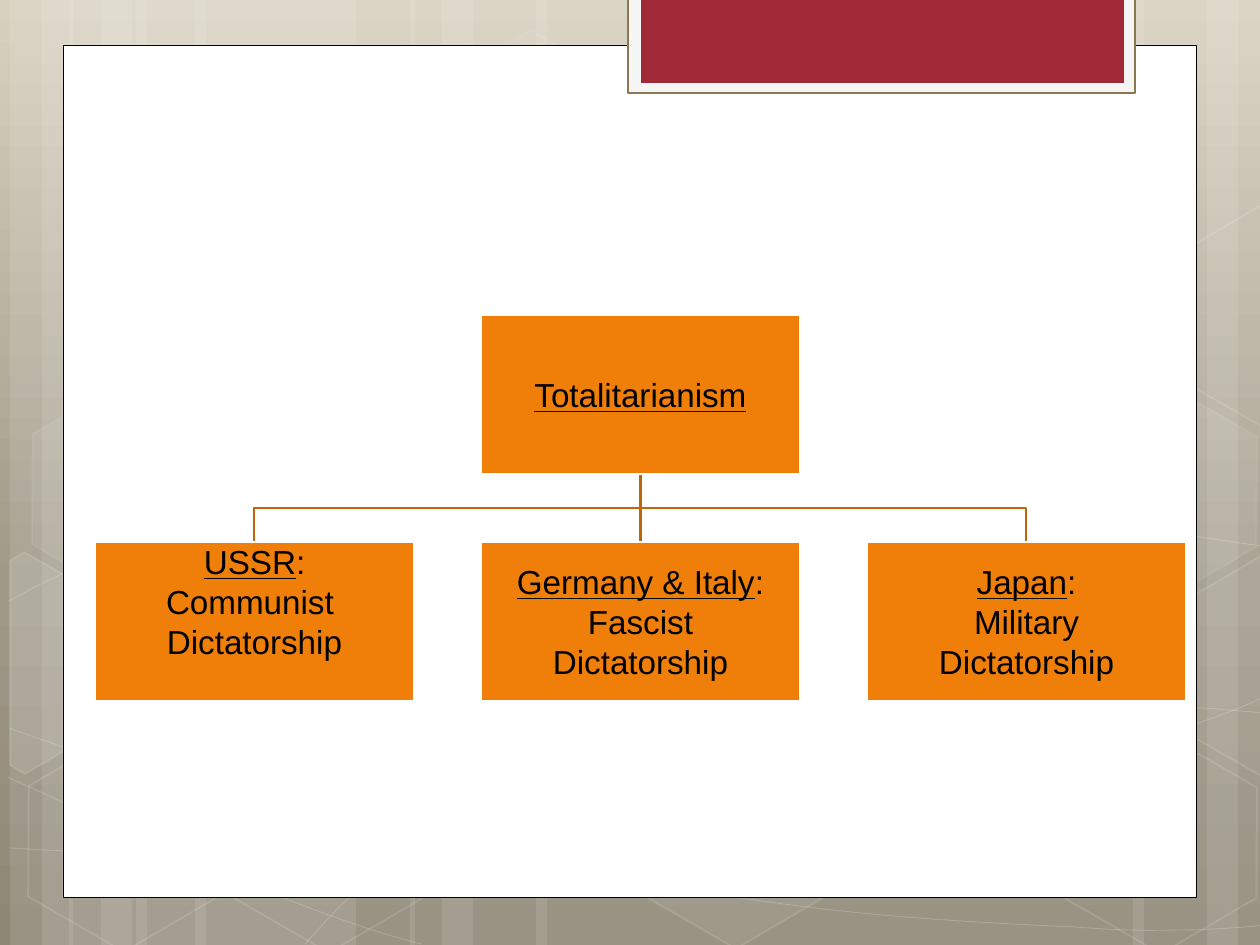
from dataclasses import dataclass
from typing import Optional

from lxml.etree import SubElement
from pptx import Presentation
from pptx.dml.color import RGBColor
from pptx.enum.shapes import MSO_CONNECTOR as Connector, MSO_SHAPE as Preset
from pptx.enum.text import MSO_ANCHOR as Anchor, PP_ALIGN as Align
from pptx.oxml.ns import qn
from pptx.util import Emu, Pt

EMU_PER_PX = 914400 / 126
WIDTH, HEIGHT = 1260, 945
COLORS = {
    "white": "FFFFFF", "black": "000000", "tab": "F5F5F5", "tab_line": "887952",
    "red": "9F2936", "orange": "F07F09", "branch": "C06607",
    "sky": "D8D1C0", "stone": "9F9988", "earth": "8E8776",
}
BACKGROUND_STOPS = [(0, "sky"), (62, "stone"), (100, "earth")]


@dataclass(frozen=True)
class Style:
    fill: Optional[str] = None
    line: Optional[str] = None
    width: float = 1
    fill_alpha: int = 100
    line_alpha: int = 100


@dataclass(frozen=True)
class Box:
    left: int
    top: int
    width: int
    height: int


@dataclass(frozen=True)
class Node:
    box: Box
    heading: str
    suffix: str = ""
    lines: tuple = ()
    bottom_inset: int = 1


def px(value: int) -> Emu:
    return Emu(round(value * EMU_PER_PX))


def rgb(name: str) -> RGBColor:
    return RGBColor.from_string(COLORS[name])


def set_alpha(parent, alpha: int) -> None:
    if parent is not None and alpha < 100:
        for color in parent.iter(qn("a:srgbClr")):
            SubElement(color, qn("a:alpha"), val=str(alpha * 1000))


def apply_style(shape, style: Style) -> None:
    shape.shadow.inherit = False
    if style.fill:
        shape.fill.solid()
        shape.fill.fore_color.rgb = rgb(style.fill)
    else:
        shape.fill.background()
    if style.line:
        shape.line.color.rgb = rgb(style.line)
        shape.line.width = Pt(style.width)
    else:
        shape.line.fill.background()
    properties = shape._element.spPr
    set_alpha(properties.find(qn("a:solidFill")), style.fill_alpha)
    set_alpha(properties.find(qn("a:ln")), style.line_alpha)


def draw_box(slide, box: Box, style: Style, preset=Preset.RECTANGLE):
    shape = slide.shapes.add_shape(
        preset, px(box.left), px(box.top), px(box.width), px(box.height))
    apply_style(shape, style)
    return shape


def draw_outline(slide, points: list, style: Style, closed: bool = False):
    builder = slide.shapes.build_freeform(*points[0], scale=EMU_PER_PX)
    builder.add_line_segments(points[1:], close=closed)
    shape = builder.convert_to_shape()
    apply_style(shape, style)
    return shape


def draw_curve(slide, points: list, style: Style) -> None:
    shape = draw_outline(slide, points, style)
    outline = next(shape._element.iter(qn("a:path")))
    segments = outline.findall(qn("a:lnTo"))
    for first in range(0, len(segments), 3):
        curve = SubElement(outline, qn("a:cubicBezTo"))
        for segment in segments[first:first + 3]:
            curve.append(segment[0])
            outline.remove(segment)


def draw_background(slide) -> None:
    fill = slide.background.fill
    fill.gradient()
    fill.gradient_angle = 270
    stops = next(slide._element.iter(qn("a:gsLst")))
    for stop in list(stops):
        stops.remove(stop)
    for position, name in BACKGROUND_STOPS:
        stop = SubElement(stops, qn("a:gs"), pos=str(position * 1000))
        SubElement(stop, qn("a:srgbClr"), val=COLORS[name])


def draw_stripes(slide) -> None:
    style = Style(fill="white", fill_alpha=10)
    for start, wide, direction in [(10, 220, 1), (69, 220, 1), (1270, 220, -1), (410, 388, 1)]:
        for offset, width in [(126, wide), (0, 63), (32, 105)]:
            left = start + offset if direction == 1 else start - offset - width
            draw_box(slide, Box(left, 0, width, HEIGHT), style)


def hexagon_style(fill_alpha: int, line_alpha: int) -> Style:
    return Style("white" if fill_alpha else None, "white", 1, fill_alpha, line_alpha)


CURVES = [
    [(9, 848), (77, 852), (145, 856), (239, 854), (334, 853), (451, 850), (577, 838),
     (703, 826), (882, 801), (998, 777), (1113, 753), (1231, 716), (1269, 694)],
    [(9, 601), (45, 581), (82, 562), (152, 543), (227, 524), (326, 499), (437, 488),
     (549, 479), (685, 478), (824, 488), (963, 498), (1193, 537), (1269, 547)],
    [(8, 777), (160, 847), (311, 916), (421, 944)],
    [(9, 728), (48, 742), (88, 756), (161, 776), (234, 795), (344, 827), (450, 848),
     (554, 867), (687, 892), (791, 905), (896, 919), (1008, 924), (1075, 927),
     (1140, 932), (1158, 930), (1191, 930), (1223, 929), (1246, 927), (1269, 925)],
    [(305, 944), (328, 919), (350, 893), (381, 871), (412, 848), (454, 825), (489, 805),
     (524, 788), (546, 780), (592, 767), (638, 754), (722, 737), (766, 728),
     (811, 719), (818, 719), (857, 717), (896, 713), (958, 709), (1000, 708),
     (1045, 707), (1116, 708), (1116, 708), (1144, 708), (1173, 708), (1201, 708),
     (1223, 709), (1245, 712), (1268, 713)],
]
HEXAGONS = [
    (421, 45, 4, 8), (626, 742, 6, 12), (14, 745, 0, 12), (18, 393, 7, 8),
    (219, 746, 0, 12), (949, 571, 10, 12), (1051, 747, 0, 12), (1051, 396, 7, 8),
]
CUT_HEXAGONS = [
    ([(10, 561), (24, 552), (121, 607), (120, 718), (25, 774), (10, 765)], 10),
    ([(1167, 611), (1261, 556), (1271, 562), (1271, 772), (1263, 777), (1167, 722)], 4),
    ([(1167, 261), (1261, 205), (1273, 212), (1271, 422), (1263, 427), (1167, 372)], 0),
]


def draw_pattern(slide) -> None:
    for points in CURVES:
        draw_curve(slide, points, Style(line="white", width=0.5, line_alpha=20))
    for left, top, fill_alpha, line_alpha in HEXAGONS:
        hexagon = draw_box(slide, Box(left, top, 220, 192),
                           hexagon_style(fill_alpha, line_alpha), Preset.HEXAGON)
        hexagon.rotation = 30
        hexagon.adjustments[0], hexagon.adjustments[1] = 0.285, 1.155
    for points, fill_alpha in CUT_HEXAGONS:
        draw_outline(slide, points, hexagon_style(fill_alpha, 12), closed=True)


def add_run(paragraph, text: str, underline: bool) -> None:
    run = paragraph.add_run()
    run.text = text
    for name, value in {"name": "Arial", "size": Pt(19), "underline": underline}.items():
        setattr(run.font, name, value)
    run.font.color.rgb = rgb("black")


def draw_node(slide, node: Node):
    shape = draw_box(slide, node.box, Style("orange", "white", 1.25))
    frame = shape.text_frame
    frame_format = {
        "word_wrap": True, "vertical_anchor": Anchor.MIDDLE, "margin_left": px(1),
        "margin_right": px(1), "margin_top": px(1), "margin_bottom": px(node.bottom_inset),
    }
    for name, value in frame_format.items():
        setattr(frame, name, value)
    heading = frame.paragraphs[0]
    add_run(heading, node.heading, True)
    if node.suffix:
        add_run(heading, node.suffix, False)
    for line in node.lines:
        add_run(frame.add_paragraph(), line, False)
    for paragraph in frame.paragraphs:
        paragraph.alignment = Align.CENTER
    return shape


NODE_W, NODE_H, PITCH = 319, 159, 386
LEFT, ROOT_TOP, CHILD_TOP = 95, 315, 542
ROOT = Node(Box(LEFT + PITCH, ROOT_TOP, NODE_W, NODE_H), "Totalitarianism")
REGIMES = [
    ("USSR", ("Communist ", "Dictatorship"), 41),
    ("Germany & Italy", ("Fascist", "Dictatorship"), 1),
    ("Japan", ("Military", "Dictatorship"), 1),
]


def draw_chart(slide) -> None:
    style = Style(line="branch", width=1.25)
    root_x, root_bottom, bend = LEFT + PITCH + NODE_W // 2, ROOT_TOP + NODE_H, 508
    for x in (root_x + PITCH, root_x - PITCH):
        draw_outline(slide, [(root_x, root_bottom), (root_x, bend), (x, bend), (x, CHILD_TOP)], style)
    trunk = slide.shapes.add_connector(
        Connector.STRAIGHT, px(root_x), px(root_bottom), px(root_x), px(CHILD_TOP))
    trunk.line.color.rgb = rgb(style.line)
    trunk.line.width = Pt(style.width)
    SubElement(trunk._element.spPr, qn("a:effectLst"))
    root = draw_node(slide, ROOT)
    children = [
        draw_node(slide, Node(Box(LEFT + i * PITCH, CHILD_TOP, NODE_W, NODE_H),
                              heading, ":", lines, inset))
        for i, (heading, lines, inset) in enumerate(REGIMES)]
    trunk.begin_connect(root, 2)
    trunk.end_connect(children[1], 0)


def main() -> None:
    presentation = Presentation()
    presentation.slide_width, presentation.slide_height = px(WIDTH), px(HEIGHT)
    slide = presentation.slides.add_slide(presentation.slide_layouts[6])
    draw_background(slide)
    draw_stripes(slide)
    draw_pattern(slide)
    draw_box(slide, Box(63, 45, 1134, 853), Style("white", "black", 0.5))
    draw_box(slide, Box(628, -3, 507, 96), Style("tab", "tab_line", 1.25))
    draw_box(slide, Box(641, -3, 483, 86), Style("red"))
    draw_chart(slide)
    presentation.save("out.pptx")


if __name__ == "__main__":
    main()
